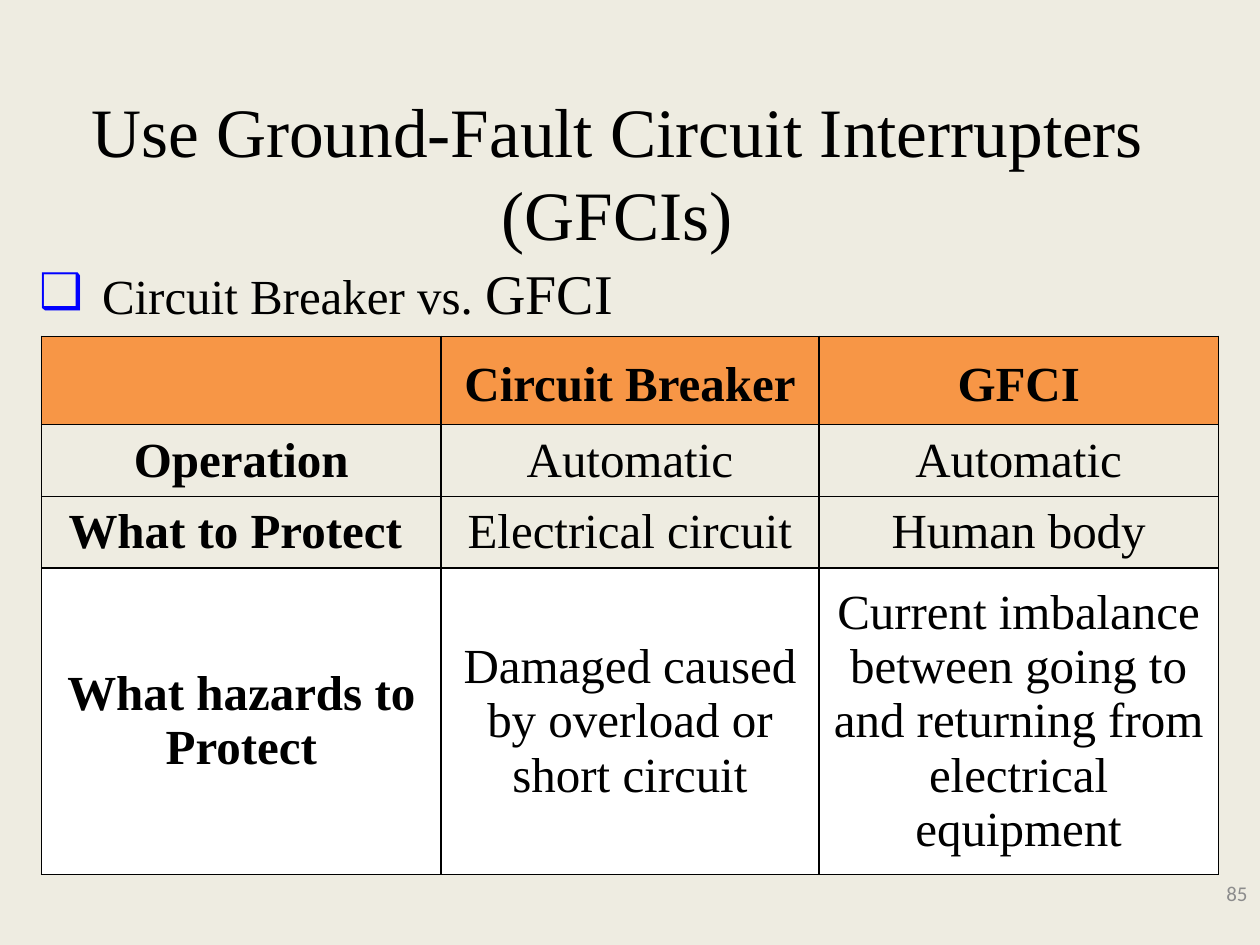
from dataclasses import dataclass

import pptx
import pptx.dml.color
import pptx.enum.text
import pptx.oxml.ns
import pptx.util
from lxml import etree

Inches = pptx.util.Inches
Align = pptx.enum.text.PP_ALIGN
Anchor = pptx.enum.text.MSO_ANCHOR


@dataclass(frozen=True)
class Theme:
    back: str = "EEECE1"
    ink: str = "000000"
    head: str = "F79646"
    white: str = "FFFFFF"
    mark: str = "0000FF"
    gray: str = "8C8C8C"
    serif: str = "Times New Roman"
    sans: str = "Calibri"
    title: float = 39.6
    large: float = 32
    text: float = 28
    small: float = 12
    rule: float = 1


@dataclass(frozen=True)
class Row:
    height: float
    cells: tuple[str, str, str]
    fill: str = ""
    head: bool = False


THEME = Theme()
COLS = (3.17, 3, 3.17)
ROWS = (
    Row(0.7, ("", "Circuit Breaker", "GFCI"), THEME.head, True),
    Row(0.57, ("Operation", "Automatic", "Automatic")),
    Row(0.57, ("What to Protect ", "Electrical circuit", "Human body")),
    Row(2.43, ("What hazards to Protect",
               "Damaged caused by overload or short circuit",
               "Current imbalance between going to and returning from "
               "electrical equipment"), THEME.white),
)


def color(code: str) -> pptx.dml.color.RGBColor:
    return pptx.dml.color.RGBColor.from_string(code)


def add_run(para, text: str, size: float, bold: bool = False,
            face: str = THEME.serif, ink: str = THEME.ink) -> None:
    run = para.add_run()
    run.text = text
    run.font.size = pptx.util.Pt(size)
    run.font.name = face
    run.font.bold = bold
    run.font.color.rgb = color(ink)


def place(shape, left: float, top: float, width: float, height: float,
          align: Align, anchor: Anchor):
    shape.left, shape.top = Inches(left), Inches(top)
    shape.width, shape.height = Inches(width), Inches(height)
    frame = shape.text_frame
    frame.word_wrap = True
    frame.auto_size = pptx.enum.text.MSO_AUTO_SIZE.NONE
    frame.vertical_anchor = anchor
    para = frame.paragraphs[0]
    para.alignment = align
    return para


def add_child(parent, tag: str, **attrs: str):
    return etree.SubElement(parent, pptx.oxml.ns.qn(tag), attrs)


def add_mark(para) -> None:
    para.space_before = pptx.util.Pt(0)
    props = para._p.get_or_add_pPr()
    props.set("marL", str(Inches(0.5)))
    props.set("indent", str(Inches(-0.5)))
    add_child(add_child(props, "a:buClr"), "a:srgbClr", val=THEME.mark)
    add_child(props, "a:buChar", char="❑")


def add_edges(cell) -> None:
    props = cell._tc.get_or_add_tcPr()
    for side in ("L", "R", "T", "B"):
        line = add_child(props, f"a:ln{side}",
                         w=str(pptx.util.Pt(THEME.rule)))
        add_child(add_child(line, "a:solidFill"), "a:srgbClr", val=THEME.ink)


def fill_cell(cell, row: Row, text: str, bold: bool) -> None:
    add_edges(cell)
    if row.fill:
        cell.fill.solid()
        cell.fill.fore_color.rgb = color(row.fill)
    else:
        cell.fill.background()
    cell.vertical_anchor = Anchor.MIDDLE
    para = cell.text_frame.paragraphs[0]
    para.alignment = Align.CENTER
    if row.head:
        cell.margin_top = Inches(0.19)
        para.line_spacing = 0.76
    if text:
        add_run(para, text, THEME.text, bold)


def add_grid(slide, left: float, top: float) -> None:
    high = sum(row.height for row in ROWS)
    grid = slide.shapes.add_table(
        len(ROWS), len(COLS), Inches(left), Inches(top),
        Inches(sum(COLS)), Inches(high)).table
    grid.first_row = grid.horz_banding = False
    for col, width in zip(grid.columns, COLS):
        col.width = Inches(width)
    for r, row in enumerate(ROWS):
        grid.rows[r].height = Inches(row.height)
        for c, text in enumerate(row.cells):
            fill_cell(grid.cell(r, c), row, text, row.head or c == 0)


def main() -> None:
    deck = pptx.Presentation()
    deck.slide_width, deck.slide_height = Inches(10), Inches(7.5)
    slide = deck.slides.add_slide(deck.slide_layouts[1])
    slide.background.fill.solid()
    slide.background.fill.fore_color.rgb = color(THEME.back)

    title = place(slide.shapes.title, 0.08, 1.05, 9.64, 0.62,
                  Align.CENTER, Anchor.MIDDLE)
    add_run(title, "Use Ground-Fault Circuit Interrupters (GFCIs)",
            THEME.title)

    body = place(slide.placeholders[1], 0.21, 2, 4.87, 0.64,
                 Align.JUSTIFY, Anchor.TOP)
    add_mark(body)
    add_run(body, "Circuit Breaker vs. ", THEME.text)
    add_run(body, "GFCI", THEME.large)

    add_grid(slide, 0.33, 2.67)

    box = slide.shapes.add_textbox(0, 0, 0, 0)
    page = place(box, 7.75, 6.89, 2.25, 0.4, Align.RIGHT, Anchor.MIDDLE)
    add_run(page, "85", THEME.small, face=THEME.sans, ink=THEME.gray)

    deck.save("out.pptx")


if __name__ == "__main__":
    main()
